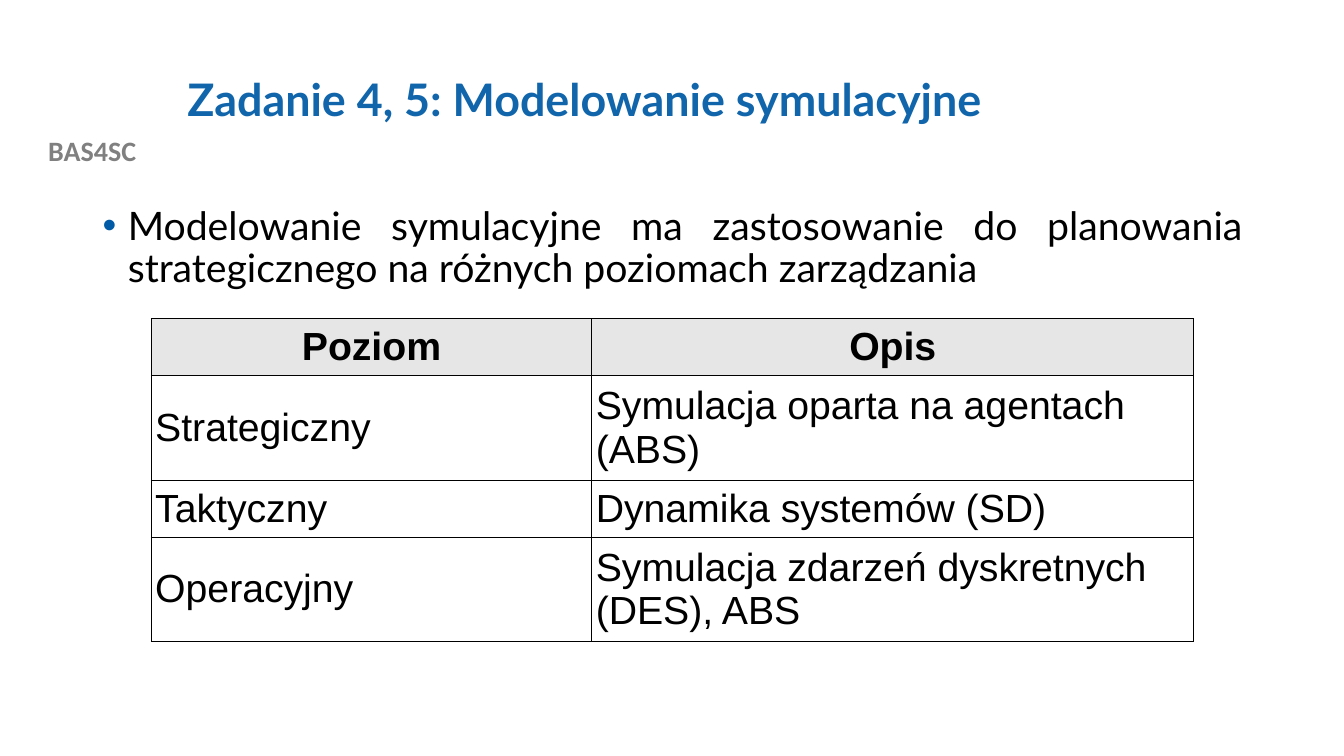
from lxml import etree
from pptx import Presentation
from pptx import util as u
from pptx.dml.color import RGBColor
from pptx.enum import text
from pptx.oxml import ns

TITLE_BLUE = RGBColor(0x10, 0x65, 0xAB)
BULLET_BLUE = RGBColor(0x01, 0x5B, 0xA6)
GRAY = RGBColor(0x80, 0x80, 0x80)
HEADER_FILL = RGBColor(0xE7, 0xE6, 0xE6)
BLACK = RGBColor(0, 0, 0)

LEVELS = [
    ("Poziom", "Opis"),
    ("Strategiczny", "Symulacja oparta na agentach (ABS)"),
    ("Taktyczny", "Dynamika systemów (SD)"),
    ("Operacyjny", "Symulacja zdarzeń dyskretnych (DES), ABS"),
]


class SlideBuilder:
    """Holds the text style and the current slide, and adds its elements."""

    body_font = "Lato"
    table_font = "Arial"
    body_size = 28
    border_width = 0.57

    def __init__(self, presentation):
        self.slide = presentation.slides.add_slide(presentation.slide_layouts[6])

    def add_words(self, paragraph, words, font, size, color=BLACK, bold=False):
        run = paragraph.add_run()
        run.text = words
        run.font.name = font
        run.font.size = u.Pt(size)
        run.font.color.rgb = color
        run.font.bold = bold

    def text_box(self, box, words, font, size, color=BLACK, bold=False,
                 align=text.PP_ALIGN.LEFT, anchor=text.MSO_ANCHOR.TOP, spacing=0.9):
        shape = self.slide.shapes.add_textbox(*map(u.Inches, box))
        frame = shape.text_frame
        frame.word_wrap = True
        frame.vertical_anchor = anchor
        paragraph = frame.paragraphs[0]
        paragraph.alignment = align
        paragraph.line_spacing = spacing
        self.add_words(paragraph, words, font, size, color, bold)
        return paragraph

    def bullet(self, box, words):
        paragraph = self.text_box(box, words, self.body_font, self.body_size,
                                  align=text.PP_ALIGN.JUSTIFY)
        properties = paragraph._p.get_or_add_pPr()
        properties.set("marL", str(u.Inches(0.25)))
        properties.set("indent", str(-u.Inches(0.25)))
        color = etree.SubElement(properties, ns.qn("a:buClr"))
        etree.SubElement(color, ns.qn("a:srgbClr"), val=str(BULLET_BLUE))
        etree.SubElement(properties, ns.qn("a:buFont"), typeface="Arial")
        etree.SubElement(properties, ns.qn("a:buChar"), char="•")

    def border(self, cell):
        properties = cell._tc.get_or_add_tcPr()
        for index, side in enumerate(("lnL", "lnR", "lnT", "lnB")):
            line = etree.Element(ns.qn(f"a:{side}"), w=str(u.Pt(self.border_width)))
            fill = etree.SubElement(line, ns.qn("a:solidFill"))
            etree.SubElement(fill, ns.qn("a:srgbClr"), val=str(BLACK))
            properties.insert(index, line)

    def table(self, box, rows, widths, heights):
        shape = self.slide.shapes.add_table(len(rows), len(widths), *map(u.Inches, box))
        table = shape.table
        table.horz_banding = False
        for column, width in zip(table.columns, widths):
            column.width = u.Inches(width)
        for row_index, (row, height) in enumerate(zip(rows, heights)):
            table.rows[row_index].height = u.Inches(height)
            for column_index, words in enumerate(row):
                self.cell(table.cell(row_index, column_index), words, row_index == 0)

    def cell(self, cell, words, header):
        cell.margin_left = cell.margin_right = u.Inches(0.04)
        cell.margin_top = cell.margin_bottom = u.Inches(0.05)
        cell.vertical_anchor = text.MSO_ANCHOR.MIDDLE
        if header:
            cell.fill.solid()
            cell.fill.fore_color.rgb = HEADER_FILL
        else:
            cell.fill.background()
        paragraph = cell.text_frame.paragraphs[0]
        paragraph.alignment = text.PP_ALIGN.CENTER if header else text.PP_ALIGN.LEFT
        self.add_words(paragraph, words, self.table_font, self.body_size, bold=header)
        self.border(cell)


def main():
    presentation = Presentation()
    presentation.slide_width = u.Inches(13.33)
    presentation.slide_height = u.Inches(7.5)
    builder = SlideBuilder(presentation)
    builder.text_box((0, 1.28, 1.83, 0.43), "BAS4SC", "Calibri", 20, GRAY, True,
                     align=text.PP_ALIGN.CENTER, spacing=1.0)
    builder.text_box((1.76, 0.4, 10.66, 1.22), "Zadanie 4, 5: Modelowanie symulacyjne",
                     builder.body_font, 32, TITLE_BLUE, True,
                     anchor=text.MSO_ANCHOR.MIDDLE)
    builder.bullet((0.92, 2, 11.5, 4.76),
                   "Modelowanie symulacyjne ma zastosowanie do planowania "
                   "strategicznego na różnych poziomach zarządzania")
    builder.table((1.5, 3.16, 10.34, 3.2), LEVELS, (4.37, 5.97),
                  (0.46, 0.53, 0.53, 0.53))
    presentation.save("out.pptx")


if __name__ == "__main__":
    main()
